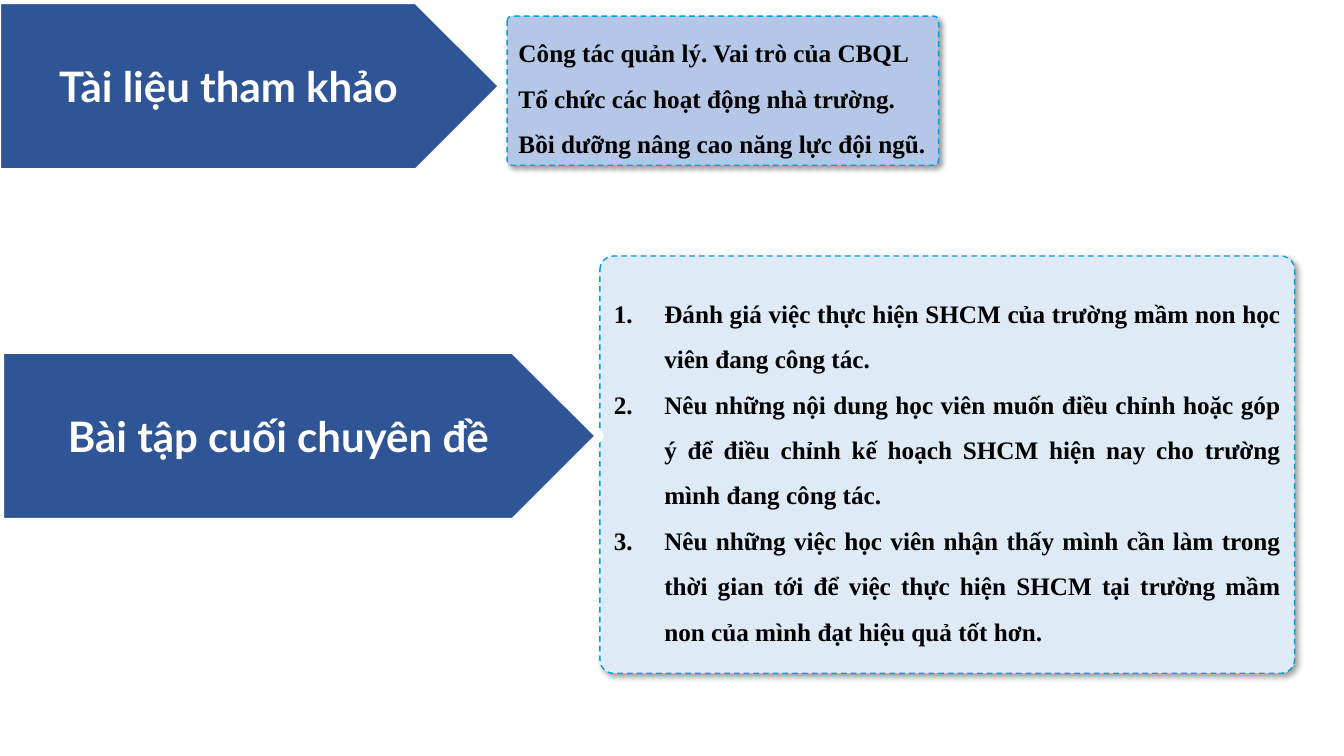
"""Build a slide that pairs two arrow headings with their text panels."""
from lxml.etree import SubElement
from pptx import Presentation
from pptx.dml.color import RGBColor
from pptx.enum.dml import MSO_LINE
from pptx.enum.shapes import MSO_SHAPE
from pptx.enum.text import MSO_ANCHOR, PP_ALIGN
from pptx.oxml.ns import qn
from pptx.util import Inches, Pt

SOURCES = [
    "Công tác quản lý. Vai trò của CBQL",
    "Tổ chức các hoạt động nhà trường.",
    "Bồi dưỡng nâng cao năng lực đội ngũ.",
]
TASKS = [
    "Đánh giá việc thực hiện SHCM của trường mầm non học viên đang công tác.",
    "Nêu những nội dung học viên muốn điều chỉnh hoặc góp ý để điều chỉnh "
    "kế hoạch SHCM hiện nay cho trường mình đang công tác.",
    "Nêu những việc học viên nhận thấy mình cần làm trong thời gian tới để "
    "việc thực hiện SHCM tại trường mầm non của mình đạt hiệu quả tốt hơn.",
]
THEME = {
    "arrow": "2F5597", "edge": "FFFFFF", "dash": "00A1DA",
    "source": "B4C7E7", "task": "DEEBF7", "shade": "000000",
    "head": {"name": "Lato", "size": Pt(30), "bold": True},
    "body": {"name": "Times New Roman", "size": Pt(18), "bold": True},
    "light": "FFFFFF", "dark": "000000",
}
HEAD = {"alignment": PP_ALIGN.CENTER}
BODY = {"alignment": PP_ALIGN.JUSTIFY, "line_spacing": 1.5}
ITEMS = [
    ("panel", (5.95, 2.54, 6.89, 4.14), "task", TASKS, True),
    ("arrow", (-0.03, 0, 5.02, 1.71), "arrow", ["Tài liệu tham khảo"], False),
    ("arrow", (0, 3.47, 5.95, 1.71), "arrow", ["Bài tập cuối chuyên đề"], False),
    ("panel", (5.03, 0.16, 4.28, 1.48), "source", SOURCES, False),
]


def tint(name):
    return RGBColor.from_string(THEME[name])


def apply(target, values):
    for name, value in values.items():
        setattr(target, name, value)


def number(para):
    props = para._p.get_or_add_pPr()
    props.set("marL", str(Inches(0.5)))
    props.set("indent", str(-Inches(0.5)))
    SubElement(props, qn("a:buFont"), typeface="+mj-lt")
    SubElement(props, qn("a:buAutoNum"), type="arabicPeriod")


def shade(shape):
    effects = shape._element.spPr.find(qn("a:effectLst"))
    outer = SubElement(
        effects, qn("a:outerShdw"), blurRad=str(Pt(4)), dist=str(Pt(3)),
        dir=str(45 * 60000), algn="tl", rotWithShape="0")
    color = SubElement(outer, qn("a:srgbClr"), val=THEME["shade"])
    SubElement(color, qn("a:alpha"), val="40000")


def write(shape, lines, layout, font, color, listed):
    frame = shape.text_frame
    apply(frame, {"word_wrap": True, "vertical_anchor": MSO_ANCHOR.MIDDLE})
    for index, line in enumerate(lines):
        para = frame.add_paragraph() if index else frame.paragraphs[0]
        apply(para, layout)
        if listed:
            number(para)
        run = para.add_run()
        run.text = line
        apply(run.font, THEME[font])
        run.font.color.rgb = tint(color)


def draw(slide, kind, place, fill, lines, listed):
    panel = kind == "panel"
    form = MSO_SHAPE.ROUNDED_RECTANGLE if panel else MSO_SHAPE.PENTAGON
    shape = slide.shapes.add_shape(form, *map(Inches, place))
    shape.shadow.inherit = False
    shape.fill.solid()
    shape.fill.fore_color.rgb = tint(fill)
    shape.line.color.rgb = tint("dash" if panel else "edge")
    shape.line.width = Pt(1 if panel else 6)
    if panel:
        shape.adjustments[0] = 0.033
        shape.line.dash_style = MSO_LINE.DASH
        shade(shape)
        write(shape, lines, BODY, "body", "dark", listed)
    else:
        write(shape, lines, HEAD, "head", "light", listed)


def main():
    deck = Presentation()
    apply(deck, {"slide_width": Inches(13.33), "slide_height": Inches(7.5)})
    slide = deck.slides.add_slide(deck.slide_layouts[6])
    for item in ITEMS:
        draw(slide, *item)
    deck.save("out.pptx")


if __name__ == "__main__":
    main()
